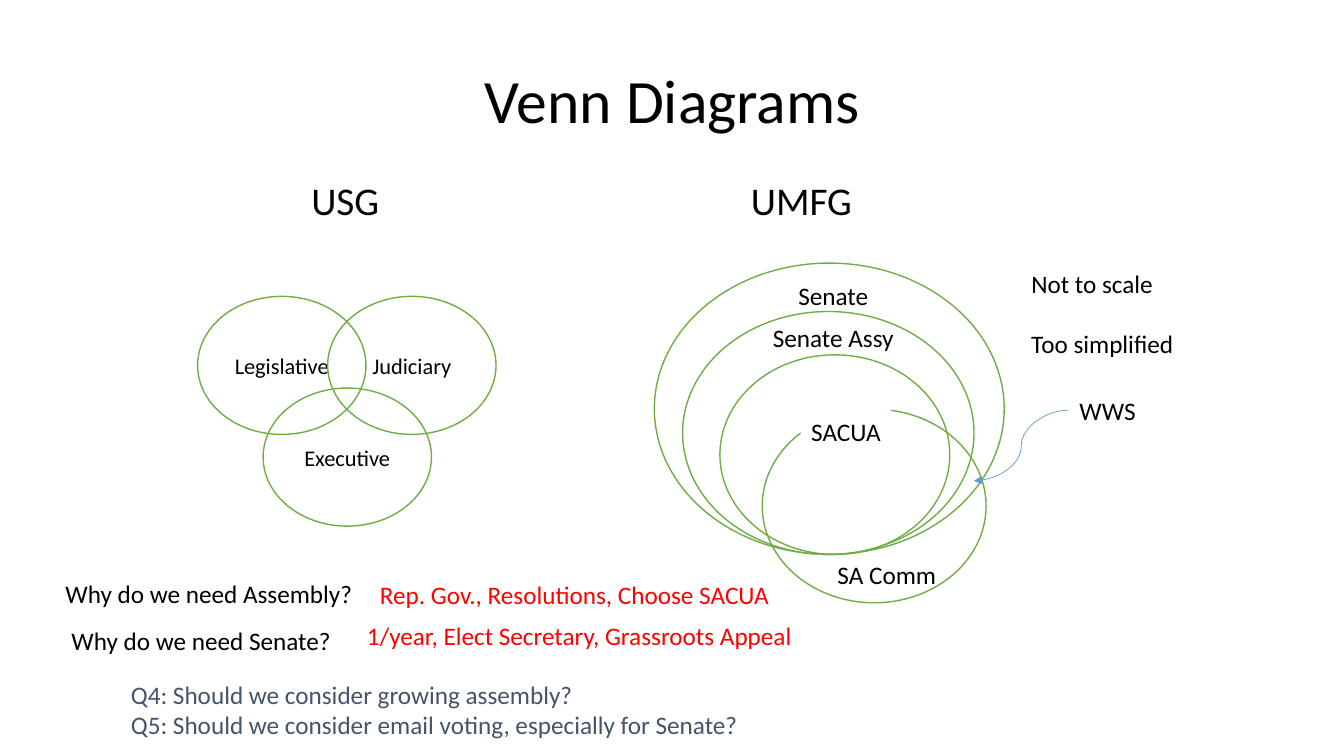
from lxml import etree
from pptx import Presentation
from pptx.dml.color import RGBColor
from pptx.enum.shapes import MSO_CONNECTOR as Connector, MSO_SHAPE as Preset
from pptx.enum.text import MSO_ANCHOR as Anchor, MSO_AUTO_SIZE as AutoSize, PP_ALIGN as Align
from pptx.oxml.ns import qn
from pptx.util import Inches, Pt

FONT = "Calibri"
BLACK, WHITE, RED, SLATE = "000000", "FFFFFF", "FF0000", "44546A"
GREEN, BLUE = "70AD47", "5B9BD5"


def color(value):
    return RGBColor.from_string(value)


def write(shape, lines, size, ink=BLACK, align=Align.LEFT, spacing=1.0, gap=0):
    """Fill a shape with one paragraph per line, with gap points between them."""
    frame = shape.text_frame
    frame.text = "\n".join(lines)
    for index, para in enumerate(frame.paragraphs):
        para.alignment = align
        para.line_spacing = spacing
        para.space_before = Pt(gap if index else 0)
        for span in para.runs:
            span.font.name = FONT
            span.font.size = Pt(size)
            span.font.color.rgb = color(ink)


def add_heading(page, box, text, size, align=Align.LEFT):
    heading = page.shapes.add_textbox(*map(Inches, box))
    heading.text_frame.word_wrap = True
    heading.text_frame.vertical_anchor = Anchor.MIDDLE
    write(heading, [text], size, align=align, spacing=0.9)


def add_label(page, box, *lines, ink=BLACK, align=Align.LEFT, gap=0):
    label = page.shapes.add_textbox(*map(Inches, box))
    label.text_frame.word_wrap = False
    label.text_frame.auto_size = AutoSize.SHAPE_TO_FIT_TEXT
    write(label, lines, 18, ink, align, gap=gap)
    return label


def add_set(page, box, text="", fill=None):
    """Draw one outlined ellipse of a Venn diagram."""
    ellipse = page.shapes.add_shape(Preset.OVAL, *map(Inches, box))
    ellipse.shadow.inherit = False
    if fill:
        ellipse.fill.solid()
        ellipse.fill.fore_color.rgb = color(fill)
    else:
        ellipse.fill.background()
    ellipse.line.color.rgb = color(GREEN)
    ellipse.line.width = Pt(1)
    if text:
        ellipse.text_frame.vertical_anchor = Anchor.MIDDLE
        ellipse.text_frame.margin_left = ellipse.text_frame.margin_right = 0
        ellipse.text_frame.word_wrap = False
        write(ellipse, [text], 16, align=Align.CENTER)


def add_branches(page, left, top):
    """Draw the three overlapping branches of government."""
    width, height = 1.67, 1.37
    branches = [("Legislative", 0, 0, WHITE), ("Judiciary", 1.29, 0, None),
                ("Executive", 0.65, 0.91, None)]
    for name, dx, dy, fill in branches:
        add_set(page, (left + dx, top + dy, width, height), name, fill)


def add_faculty(page, left, top):
    """Draw the nested faculty bodies, with the committees reaching outside."""
    bottom = top + 2.89
    add_set(page, (left + 1.07, top + 1.45, 2.22, 1.92))
    add_label(page, (left + 1.71, bottom, 1.19, 0.4), "SA Comm", align=Align.CENTER)
    for dx, width, height in [(0, 3.47, 2.89), (0.28, 2.89, 2.41), (0.65, 2.28, 1.98)]:
        add_set(page, (left + dx, bottom - height, width, height))
    add_label(page, (left + 1.07, top + 0.12, 1.41, 1.03), "Senate", "Senate Assy",
              align=Align.CENTER, gap=8.5)

    core = page.shapes.add_textbox(*map(Inches, (left + 1.45, top + 1.16, 0.9, 0.71)))
    core.fill.solid()
    core.fill.fore_color.rgb = color(WHITE)
    core.text_frame.word_wrap = False
    core.text_frame.vertical_anchor = Anchor.BOTTOM
    write(core, ["SACUA"], 18, align=Align.CENTER)


def add_callout(page, box, tip):
    """Place the WWS label and its curved arrow to the tip."""
    label = add_label(page, box, "WWS", align=Align.CENTER)
    left, top, _, height = box
    arrow = page.shapes.add_connector(
        Connector.CURVE, Inches(left), Inches(top + height / 2), *map(Inches, tip))
    arrow.begin_connect(label, 1)
    arrow.line.color.rgb = color(BLUE)
    arrow.line.width = Pt(0.5)
    etree.SubElement(arrow.line._get_or_add_ln(), qn("a:tailEnd"), type="triangle")
    etree.SubElement(arrow._element.spPr, qn("a:effectLst"))


def add_questions(page, left, top):
    """List the questions with their answers in red, then the open ones."""
    add_label(page, (left, top, 3.08, 0.4), "Why do we need Assembly?")
    add_label(page, (left + 0.06, top + 0.46, 2.81, 0.4), "Why do we need Senate?")
    add_label(page, (left + 3.12, top + 0.01, 4.1, 0.4),
              "Rep. Gov., Resolutions, Choose SACUA", ink=RED)
    add_label(page, (left + 2.99, top + 0.42, 4.46, 0.4),
              "1/year, Elect Secretary, Grassroots Appeal", ink=RED)
    add_label(page, (left + 0.65, top + 1, 6.3, 0.71),
              "Q4: Should we consider growing assembly?",
              "Q5: Should we consider email voting, especially for Senate?", ink=SLATE)


def main():
    deck = Presentation()
    deck.slide_width, deck.slide_height = Inches(13.33), Inches(7.5)
    page = deck.slides.add_slide(deck.slide_layouts[6])

    add_heading(page, (0.92, 0.3, 11.5, 1.45), "Venn Diagrams", 44, Align.CENTER)
    for name, left in [("USG", 2.99), ("UMFG", 7.35)]:
        add_heading(page, (left, 1.75, 1.5, 0.53), name, 28)
    add_branches(page, 1.96, 2.94)
    for note, top, width in [("Not to scale", 2.61, 1.42), ("Too simplified", 3.21, 1.63)]:
        add_label(page, (10.13, top, width, 0.4), note)
    add_faculty(page, 6.49, 2.61)
    add_callout(page, (10.6, 3.87, 0.77, 0.4), (9.66, 4.77))
    add_questions(page, 0.55, 5.69)
    deck.save("out.pptx")


if __name__ == "__main__":
    main()
